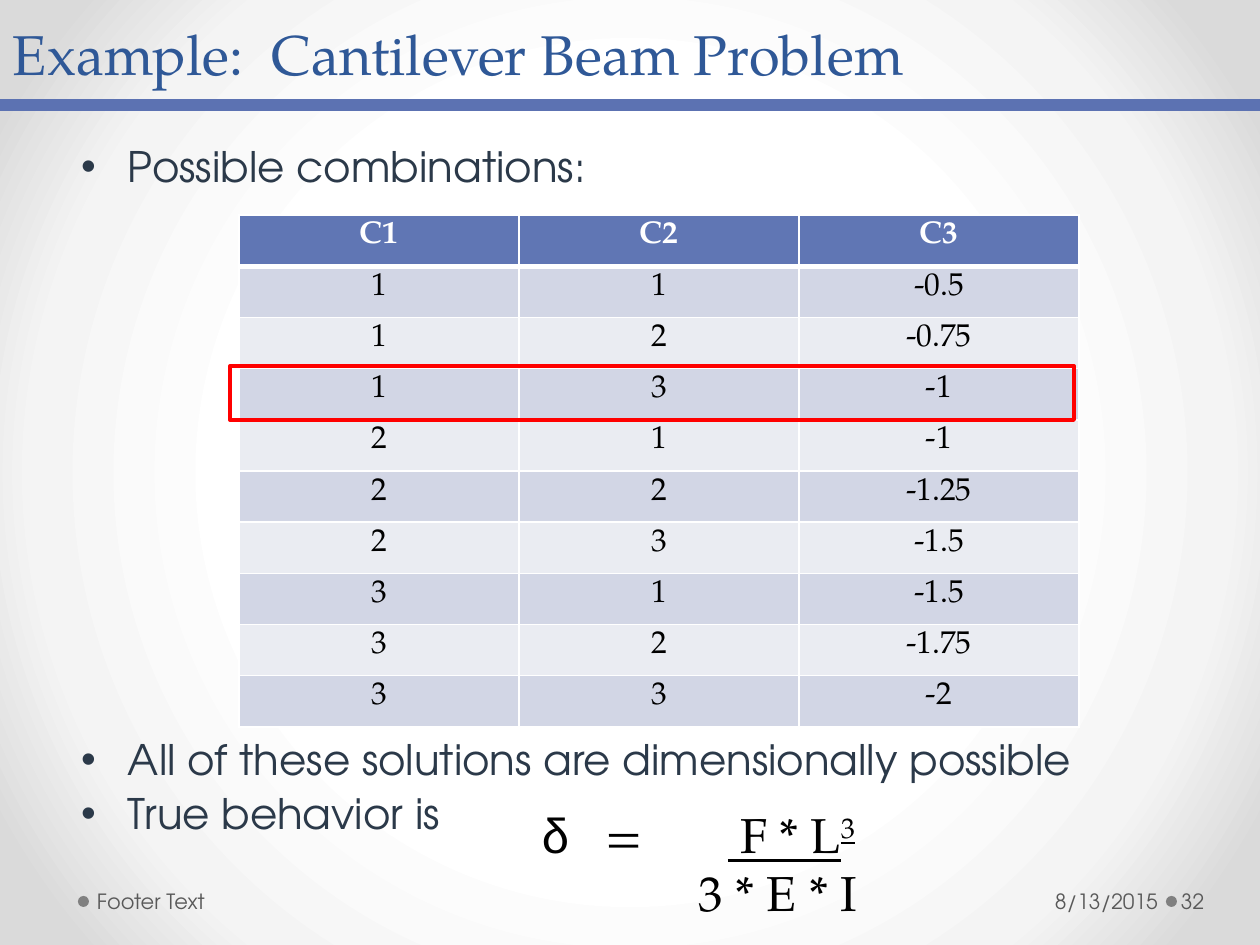
from dataclasses import dataclass

from lxml import etree
from pptx import Presentation
from pptx import util as u
from pptx.dml.color import RGBColor
from pptx.enum import shapes, text
from pptx.oxml import parse_xml
from pptx.oxml.ns import nsdecls, qn


@dataclass(frozen=True)
class Theme:
    serif: str = "TeX Gyre Pagella"
    sans: str = "TeX Gyre Adventor"
    greek: str = "Arial"
    title: str = "2F5897"
    body: str = "2B3949"
    foot: str = "595959"
    dot: str = "808080"
    rule: str = "5C72B2"
    head: str = "6076B4"
    bands: tuple = ("D2D6E5", "EAECF2")
    mark: str = "FF0000"
    black: str = "000000"
    white: str = "FFFFFF"
    glow: tuple = ((50, "FFFFFF"), (76, "F4F4F4"), (92, "DADADA"))
    title_pt: int = 32
    formula_pt: int = 28
    body_pt: int = 24
    cell_pt: int = 18
    foot_pt: int = 12


T = Theme()
ALIGN = text.PP_ALIGN
ANCHOR = text.MSO_ANCHOR
PX = 914400 / 126
COMBOS = [
    (1, 1, "-0.5"), (1, 2, "-0.75"), (1, 3, "-1"),
    (2, 1, "-1"), (2, 2, "-1.25"), (2, 3, "-1.5"),
    (3, 1, "-1.5"), (3, 2, "-1.75"), (3, 3, "-2"),
]


def px(n):
    return u.Emu(round(n * PX))


def rgb(code):
    return RGBColor.from_string(code)


def write(para, words, *, font=T.serif, size=T.body_pt, color=T.black,
          bold=False, under=False, raised=False, align=None):
    """Append one formatted run to a paragraph."""
    if align is not None:
        para.alignment = align
    run = para.add_run()
    run.text = words
    face = run.font
    face.name, face.size, face.bold = font, u.Pt(size), bold
    face.underline = under
    face.color.rgb = rgb(color)
    if raised:
        face._element.set("baseline", "30000")


def place(shape, left, top, width, height):
    shape.left, shape.top = px(left), px(top)
    shape.width, shape.height = px(width), px(height)


def frame(shape, anchor, margins=(13, 6, 13, 6)):
    """Set wrapping, anchor and margins; return the text frame."""
    tf = shape.text_frame
    tf.word_wrap = True
    tf.auto_size = text.MSO_AUTO_SIZE.NONE
    tf.vertical_anchor = anchor
    (tf.margin_left, tf.margin_top,
     tf.margin_right, tf.margin_bottom) = map(px, margins)
    return tf


def backdrop(slide):
    stops = "".join(
        f'<a:gs pos="{pos * 1000}"><a:srgbClr val="{code}"/></a:gs>'
        for pos, code in T.glow)
    slide._element.cSld.insert(0, parse_xml(
        f'<p:bg {nsdecls("p", "a")}><p:bgPr><a:gradFill rotWithShape="1">'
        f'<a:gsLst>{stops}</a:gsLst><a:path path="circle">'
        '<a:fillToRect l="50000" t="50000" r="50000" b="50000"/></a:path>'
        '</a:gradFill><a:effectLst/></p:bgPr></p:bg>'))


def rule(slide):
    line = slide.shapes.add_connector(
        shapes.MSO_CONNECTOR.STRAIGHT, px(0), px(105), px(1260), px(105))
    line.line.color.rgb = rgb(T.rule)
    line.line.width = u.Pt(6.75)
    etree.SubElement(line._element.spPr, qn("a:effectLst"))


def dot(slide, left):
    mark = slide.shapes.add_shape(
        shapes.MSO_SHAPE.OVAL, px(left), px(896), px(11), px(11))
    mark.shadow.inherit = False
    mark.fill.solid()
    mark.fill.fore_color.rgb = rgb(T.dot)
    mark.line.fill.background()


def title(slide, words):
    box = slide.shapes.title
    place(box, 0, -23, 1249, 116)
    para = frame(box, ANCHOR.BOTTOM).paragraphs[0]
    para.line_spacing = u.Pt(58)
    write(para, words, size=T.title_pt, color=T.title, align=ALIGN.LEFT)


def bullets(slide, items):
    """Fill the body with (words, points of space before) pairs."""
    box = slide.placeholders[1]
    place(box, 68, 140, 1134, 728)
    tf = frame(box, ANCHOR.TOP)
    for i, (words, gap) in enumerate(items):
        para = tf.add_paragraph() if i else tf.paragraphs[0]
        props = para._p.get_or_add_pPr()
        props.set("marL", str(px(47)))
        props.set("indent", str(px(-47)))
        para.line_spacing = 0.9
        para.space_before = u.Pt(gap)
        write(para, words, font=T.sans, color=T.body)


def footer(slide, words, left, width, margins, align=ALIGN.LEFT):
    box = slide.shapes.add_textbox(px(left), px(876), px(width), px(50))
    write(frame(box, ANCHOR.MIDDLE, margins).paragraphs[0], words,
          font=T.sans, size=T.foot_pt, color=T.foot, align=align)


def border(cell, bottom):
    """Draw white borders, with the bottom one of the given points."""
    props = cell._tc.get_or_add_tcPr()
    for i, (side, pt) in enumerate(
            (("L", 1), ("R", 1), ("T", 1), ("B", bottom))):
        props.insert(i, parse_xml(
            f'<a:ln{side} {nsdecls("a")} w="{u.Pt(pt)}"><a:solidFill>'
            f'<a:srgbClr val="{T.white}"/></a:solidFill></a:ln{side}>'))


def table(slide, rows):
    grid = slide.shapes.add_table(
        len(rows), len(rows[0]), px(239), px(215), px(840), px(512)).table
    grid.horz_banding = False
    for r, row in enumerate(rows):
        top = r == 0
        for c, value in enumerate(row):
            cell = grid.cell(r, c)
            cell.fill.solid()
            cell.fill.fore_color.rgb = rgb(
                T.head if top else T.bands[(r - 1) % 2])
            border(cell, 3 if top else 1)
            write(cell.text_frame.paragraphs[0], str(value), size=T.cell_pt,
                  color=T.white if top else T.black, bold=top,
                  align=ALIGN.CENTER)


def formula(slide):
    box = slide.shapes.add_textbox(px(529), px(798), px(430), px(131))
    tf = frame(box, ANCHOR.TOP)
    over, under = tf.paragraphs[0], tf.add_paragraph()
    tabs = etree.SubElement(over._p.get_or_add_pPr(), qn("a:tabLst"))
    for stop in (64, 186):
        etree.SubElement(tabs, qn("a:tab"), pos=str(px(stop)), algn="l")
    size = T.formula_pt
    write(over, "δ", font=T.greek, size=size)
    write(over, "\t=\t", size=size)
    write(over, " F * L", size=size, under=True)
    write(over, "3", size=size, under=True, raised=True)
    under._p.get_or_add_pPr().set("marL", str(px(157)))
    write(under, "3 * E * I", size=size)


def outline(slide):
    box = slide.shapes.add_shape(
        shapes.MSO_SHAPE.RECTANGLE, px(230), px(366), px(844), px(54))
    box.shadow.inherit = False
    box.fill.background()
    box.line.color.rgb = rgb(T.mark)
    box.line.width = u.Pt(2.25)


def main():
    deck = Presentation()
    deck.slide_width, deck.slide_height = px(1260), px(945)
    slide = deck.slides.add_slide(deck.slide_layouts[1])
    backdrop(slide)
    for left in (1166, 78):
        dot(slide, left)
    rule(slide)
    title(slide, "Example:  Cantilever Beam Problem")
    bullets(slide, [
        ("Possible combinations:", 0),
        ("All of these solutions are dimensionally possible", 313),
        ("True behavior is", 5),
    ])
    footer(slide, "8/13/2015", 877, 287, (13, 6, 6, 6), ALIGN.RIGHT)
    footer(slide, "Footer Text", 91, 392, (6, 6, 13, 6))
    footer(slide, "32", 1177, 77, (4, 6, 6, 6))
    table(slide, [("C1", "C2", "C3"), *COMBOS])
    formula(slide)
    outline(slide)
    deck.save("out.pptx")


if __name__ == "__main__":
    main()
